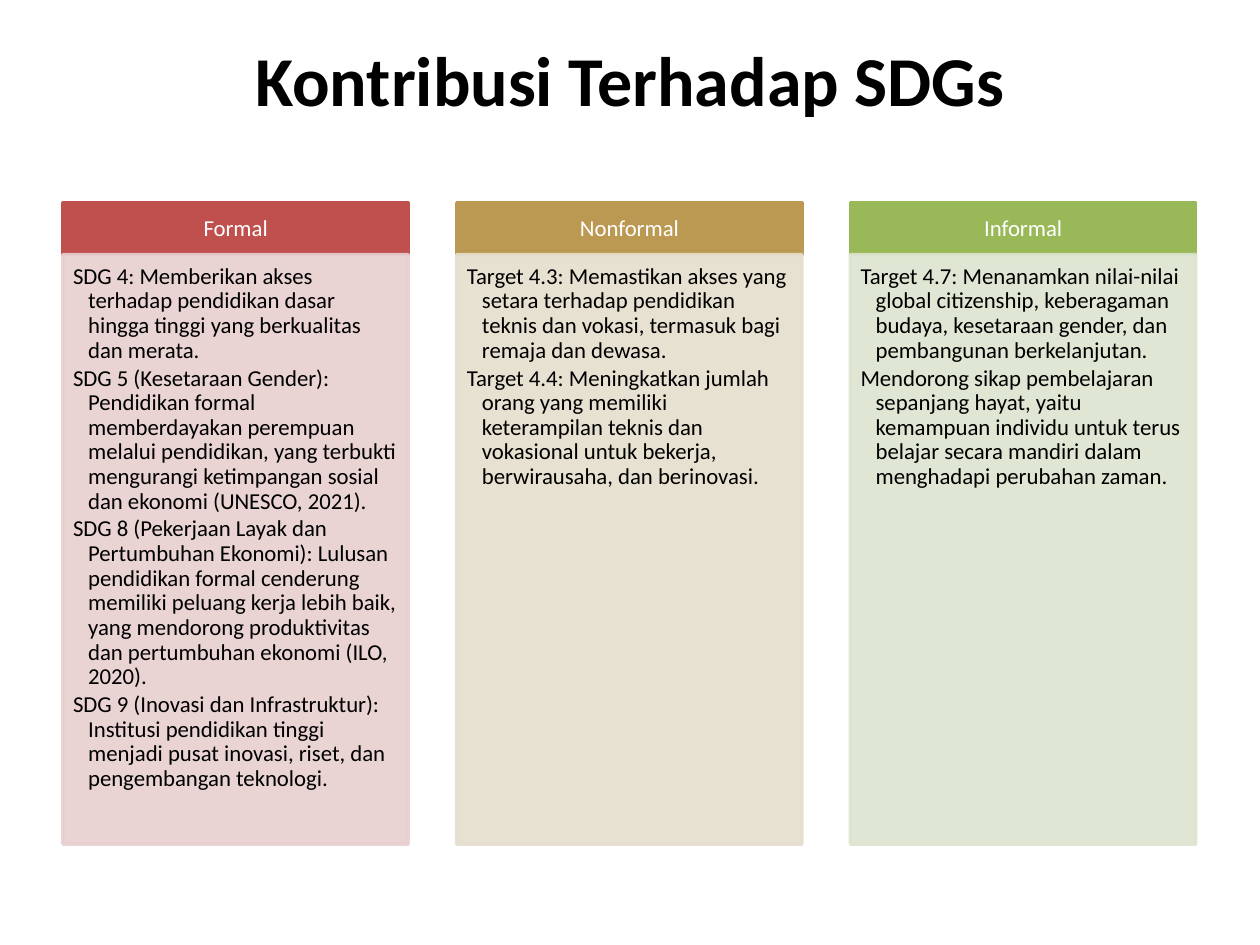
import dataclasses
import typing

import lxml.etree
import pptx
import pptx.dml.color
import pptx.enum.shapes
import pptx.enum.text
import pptx.oxml.ns
import pptx.util

Inches = pptx.util.Inches
Pt = pptx.util.Pt
Anchor = pptx.enum.text.MSO_ANCHOR
Align = pptx.enum.text.PP_ALIGN

FONT = "Calibri"
COLORS = {
    "black": "000000", "white": "FFFFFF",
    "red": "BF504D", "pale red": "E7CFCF",
    "gold": "BB9952", "pale gold": "E5DECE",
    "green": "99B958", "pale green": "DCE4CF",
}

COLUMN_LEFT, COLUMN_PITCH, COLUMN_WIDTH = 0.5, 3.125, 2.74
HEADER_TOP, HEADER_HEIGHT, BODY_HEIGHT = 1.61, 0.41, 4.68
HANGING_INDENT = 0.12


@dataclasses.dataclass(frozen=True)
class Pathway:
    name: str
    color: str
    contributions: tuple[str, ...]


@dataclasses.dataclass(frozen=True)
class BoxStyle:
    top: float
    height: float
    opacity: int
    text_color: str
    frame_format: dict[str, typing.Any]
    paragraph_format: dict[str, typing.Any]
    hanging: bool = False


HEADER = BoxStyle(
    HEADER_TOP, HEADER_HEIGHT, 100, "white",
    {"vertical_anchor": Anchor.MIDDLE, "margin_left": Inches(0.1), "margin_right": Inches(0.1),
     "margin_top": Inches(0.06), "margin_bottom": Inches(0.06)},
    {"alignment": Align.CENTER, "line_spacing": 0.9},
)
BODY = BoxStyle(
    HEADER_TOP + HEADER_HEIGHT, BODY_HEIGHT, 90, "black",
    {"vertical_anchor": Anchor.TOP, "margin_left": Inches(0.08), "margin_right": Inches(0.1),
     "margin_top": Inches(0.08), "margin_bottom": Inches(0.11)},
    {"alignment": Align.LEFT, "line_spacing": 0.9, "level": 1},
    hanging=True,
)

PATHWAYS = (
    Pathway("Formal", "red", (
        "SDG 4: Memberikan akses terhadap pendidikan dasar hingga tinggi yang berkualitas dan merata.",
        "SDG 5 (Kesetaraan Gender): Pendidikan formal memberdayakan perempuan melalui pendidikan, "
        "yang terbukti mengurangi ketimpangan sosial dan ekonomi (UNESCO, 2021).",
        "SDG 8 (Pekerjaan Layak dan Pertumbuhan Ekonomi): Lulusan pendidikan formal cenderung memiliki "
        "peluang kerja lebih baik, yang mendorong produktivitas dan pertumbuhan ekonomi (ILO, 2020).",
        "SDG 9 (Inovasi dan Infrastruktur): Institusi pendidikan tinggi menjadi pusat inovasi, riset, "
        "dan pengembangan teknologi.",
    )),
    Pathway("Nonformal", "gold", (
        "Target 4.3: Memastikan akses yang setara terhadap pendidikan teknis dan vokasi, "
        "termasuk bagi remaja dan dewasa.",
        "Target 4.4: Meningkatkan jumlah orang yang memiliki keterampilan teknis dan vokasional "
        "untuk bekerja, berwirausaha, dan berinovasi.",
    )),
    Pathway("Informal", "green", (
        "Target 4.7: Menanamkan nilai-nilai global citizenship, keberagaman budaya, "
        "kesetaraan gender, dan pembangunan berkelanjutan.",
        "Mendorong sikap pembelajaran sepanjang hayat, yaitu kemampuan individu untuk terus "
        "belajar secara mandiri dalam menghadapi perubahan zaman.",
    )),
)


def rgb(name: str) -> pptx.dml.color.RGBColor:
    return pptx.dml.color.RGBColor.from_string(COLORS[name])


def apply_format(target: typing.Any, values: dict[str, typing.Any]) -> None:
    for attribute, value in values.items():
        setattr(target, attribute, value)


def paint(shape: typing.Any, color: str, opacity: int) -> None:
    """Give fill and outline one colour, with opacity in percent."""
    shape.shadow.inherit = False
    shape.fill.solid()
    shape.line.width = Pt(2)
    for fill in (shape.fill, shape.line.fill):
        fill.solid()
        fill.fore_color.rgb = rgb(color)
    if opacity < 100:
        for element in shape._element.spPr.iter(pptx.oxml.ns.qn("a:srgbClr")):
            alpha = lxml.etree.SubElement(element, pptx.oxml.ns.qn("a:alpha"))
            alpha.set("val", str(opacity * 1000))


def add_box(slide: typing.Any, column: int, color: str,
            texts: tuple[str, ...], style: BoxStyle) -> None:
    shape = slide.shapes.add_shape(
        pptx.enum.shapes.MSO_SHAPE.RECTANGLE,
        Inches(COLUMN_LEFT + column * COLUMN_PITCH), Inches(style.top),
        Inches(COLUMN_WIDTH), Inches(style.height))
    paint(shape, color, style.opacity)
    frame = shape.text_frame
    apply_format(frame, {"word_wrap": True, **style.frame_format})
    frame.text = "\n".join(texts)
    for index, paragraph in enumerate(frame.paragraphs):
        apply_format(paragraph, style.paragraph_format)
        paragraph.space_before = Pt(1.9 if index else 0)
        if style.hanging:
            properties = paragraph._p.get_or_add_pPr()
            properties.set("marL", str(Inches(HANGING_INDENT)))
            properties.set("indent", str(-Inches(HANGING_INDENT)))
        for run in paragraph.runs:
            apply_format(run.font, {"name": FONT, "size": Pt(13)})
            run.font.color.rgb = rgb(style.text_color)


def add_title(slide: typing.Any, text: str) -> None:
    title = slide.shapes.title
    apply_format(title, {"left": Inches(0.5), "top": 0, "width": Inches(9), "height": Inches(1.25)})
    title.text_frame.text = text
    title.text_frame.vertical_anchor = Anchor.MIDDLE
    paragraph = title.text_frame.paragraphs[0]
    paragraph.alignment = Align.CENTER
    font = paragraph.runs[0].font
    apply_format(font, {"name": FONT, "size": Pt(40), "bold": True})
    font.color.rgb = rgb("black")


def main() -> None:
    presentation = pptx.Presentation()
    apply_format(presentation, {"slide_width": Inches(10), "slide_height": Inches(7.5)})
    slide = presentation.slides.add_slide(presentation.slide_layouts.get_by_name("Title Only"))
    add_title(slide, "Kontribusi Terhadap SDGs")
    for column, pathway in enumerate(PATHWAYS):
        add_box(slide, column, pathway.color, (pathway.name,), HEADER)
        add_box(slide, column, f"pale {pathway.color}", pathway.contributions, BODY)
    presentation.save("out.pptx")


if __name__ == "__main__":
    main()
